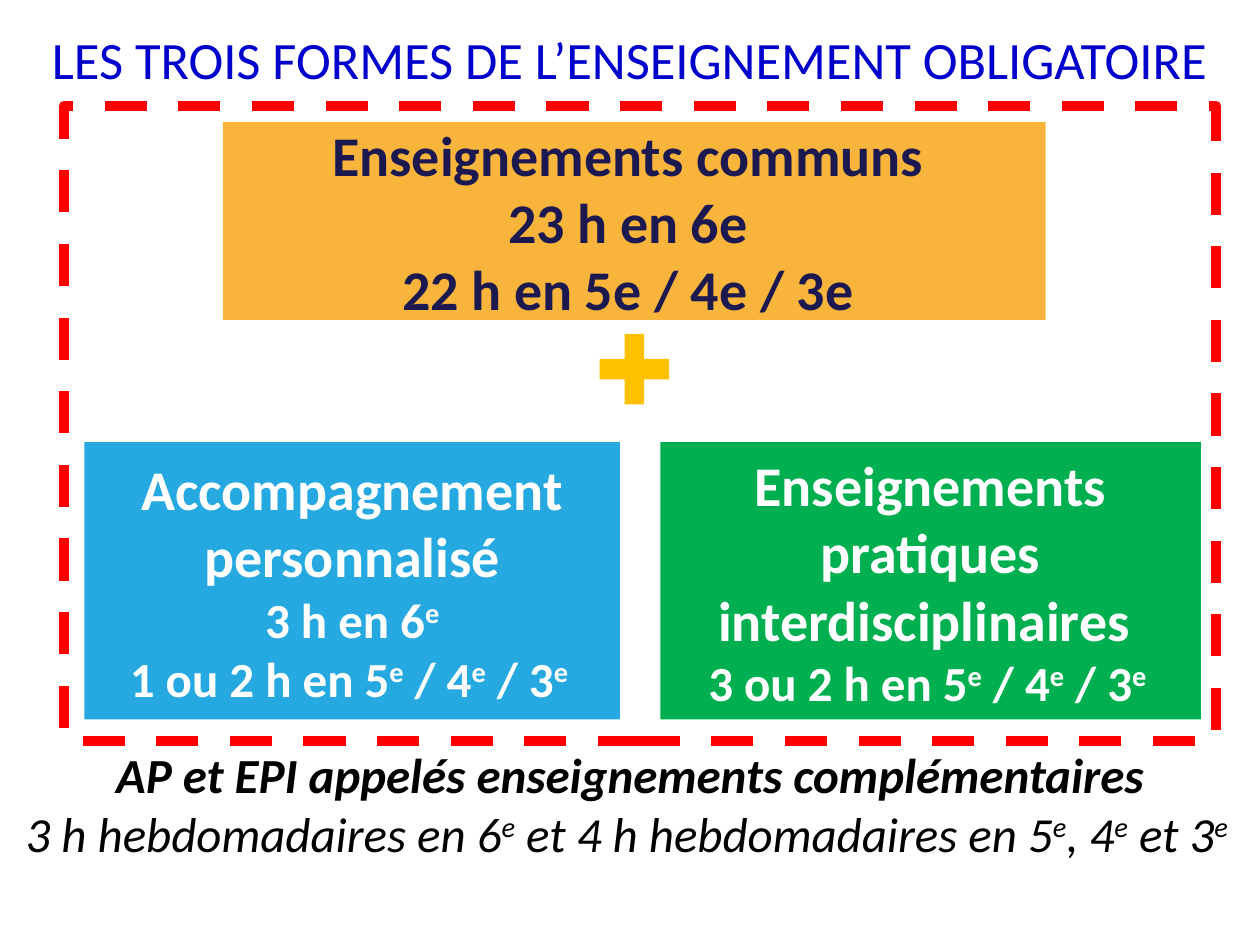
"""Build the slide on the three forms of compulsory teaching."""
from dataclasses import dataclass
from typing import Optional

from pptx import Presentation
from pptx.dml.color import RGBColor
from pptx.enum.dml import MSO_LINE
from pptx.enum.shapes import MSO_SHAPE
from pptx.enum.text import MSO_ANCHOR, PP_ALIGN
from pptx.util import Inches, Pt

RECT, PLUS = MSO_SHAPE.RECTANGLE, MSO_SHAPE.CROSS
DASH = MSO_LINE.DASH
TOP, MIDDLE, BOTTOM = MSO_ANCHOR.TOP, MSO_ANCHOR.MIDDLE, MSO_ANCHOR.BOTTOM
CENTER = PP_ALIGN.CENTER
FONT = "Calibri"


@dataclass
class Line:
    """A paragraph; text between carets is superscript."""
    text: str
    size: int
    bold: bool = False
    italic: bool = False


@dataclass
class Box:
    """A text block with its place (left, top, width, height) and colours."""
    at: tuple[float, float, float, float]
    color: str
    lines: list[Line]
    fill: Optional[str] = None
    anchor: MSO_ANCHOR = MIDDLE


BOXES = [
    Box((1.77, 0.97, 6.53, 1.57), "1C1850", [
        Line("Enseignements communs\u00a0", 32, True),
        Line("23 h en 6e ", 32, True),
        Line("22 h en 5e / 4e / 3e ", 32, True)], "F9B53B"),
    Box((5.24, 3.51, 4.29, 2.2), "FFFFFF", [
        Line("Enseignements pratiques interdisciplinaires ", 32, True),
        Line("3 ou 2 h en 5^e^ / 4^e^ / 3^e ^", 28, True)], "00B050"),
    Box((0.67, 3.51, 4.25, 2.2), "FFFFFF", [
        Line("Accompagnement personnalisé", 32, True),
        Line("3 h en 6^e^", 28, True),
        Line("1 ou 2 h en 5^e^ / 4^e^ / 3^e ^", 28, True)], "26A9E1"),
    Box((0, 0.18, 10, 0.58), "0000CC", [
        Line("LES TROIS FORMES DE L’ENSEIGNEMENT OBLIGATOIRE", 30)], anchor=BOTTOM),
    Box((0, 5.86, 10, 1.04), "000000", [
        Line("AP et EPI appelés enseignements complémentaires", 28, True, True),
        Line("3 h hebdomadaires en 6^e^ et 4 h hebdomadaires en 5^e^, 4^e^ et 3^e ^",
             28, italic=True)], anchor=TOP),
]


def rgb(color: str) -> RGBColor:
    """Turn a hex string into a colour."""
    return RGBColor.from_string(color)


def add_plain_shape(s, kind: MSO_SHAPE, at: tuple, fill: Optional[str] = None):
    """Add a shape without shadow or outline."""
    sp = s.shapes.add_shape(kind, *map(Inches, at))
    sp.shadow.inherit = False
    sp.line.fill.background()
    if fill:
        sp.fill.solid()
        sp.fill.fore_color.rgb = rgb(fill)
    else:
        sp.fill.background()
    return sp


def add_line(p, line: Line, color: str) -> None:
    """Write one centred paragraph run by run."""
    p.alignment = CENTER
    for i, text in enumerate(line.text.split("^")):
        if not text:
            continue
        r = p.add_run()
        r.text = text
        r.font.name, r.font.size = FONT, Pt(line.size)
        r.font.bold, r.font.italic = line.bold, line.italic
        r.font.color.rgb = rgb(color)
        if i % 2:
            r._r.get_or_add_rPr().set("baseline", "30000")


def add_box(s, box: Box) -> None:
    """Draw a filled rectangle or a bare text box with its lines."""
    if box.fill:
        sp = add_plain_shape(s, RECT, box.at, box.fill)
    else:
        sp = s.shapes.add_textbox(*map(Inches, box.at))
    tf = sp.text_frame
    tf.word_wrap = True
    tf.vertical_anchor = box.anchor
    for i, line in enumerate(box.lines):
        add_line(tf.add_paragraph() if i else tf.paragraphs[0], line, box.color)


def main() -> None:
    """Build and save the slide."""
    prs = Presentation()
    prs.slide_width, prs.slide_height = Inches(10), Inches(7.5)
    s = prs.slides.add_slide(prs.slide_layouts[6])
    for box in BOXES:
        add_box(s, box)
    plus = add_plain_shape(s, PLUS, (4.76, 2.65, 0.55, 0.56), "FFC000")
    plus.adjustments[0] = 0.36
    frame = add_plain_shape(s, RECT, (0.51, 0.84, 9.14, 5.04))
    frame.line.color.rgb = rgb("FF0000")
    frame.line.width = Pt(6)
    frame.line.dash_style = DASH
    prs.save("out.pptx")


if __name__ == "__main__":
    main()
